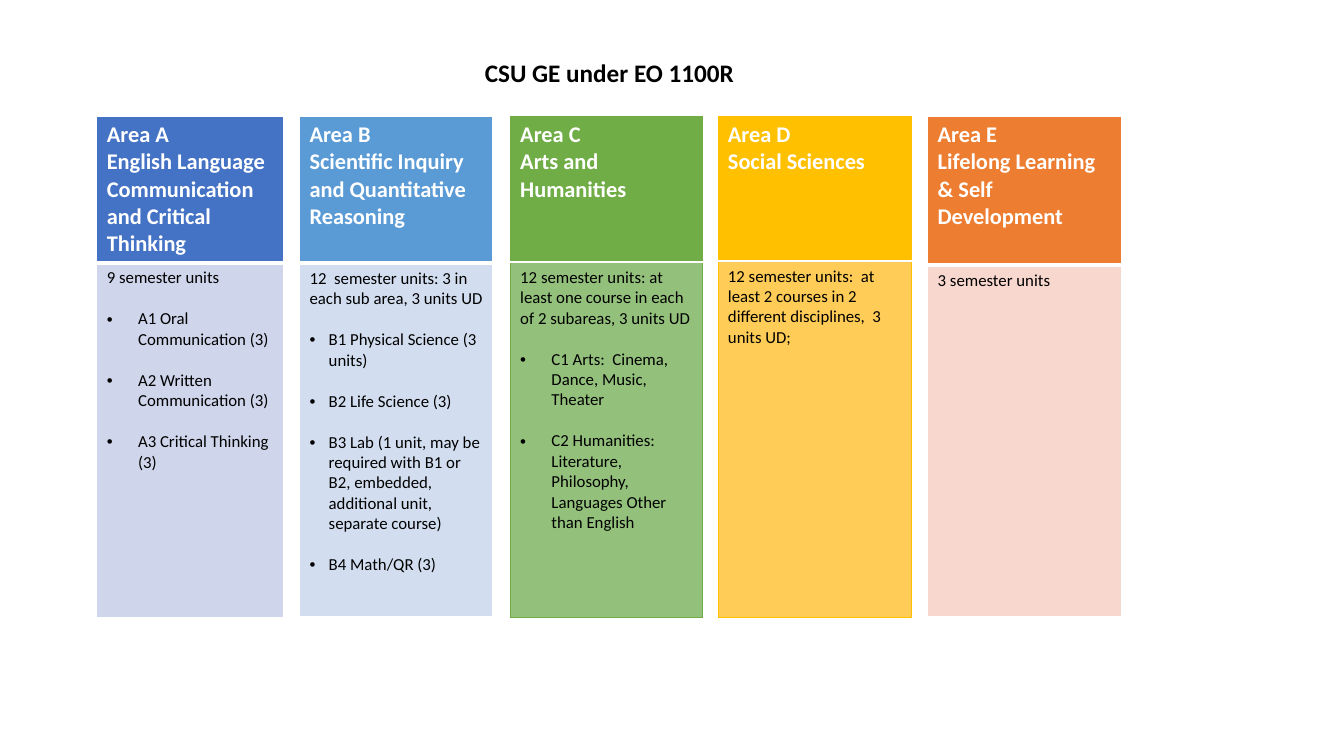
from dataclasses import dataclass

from lxml.etree import SubElement
from pptx import Presentation
from pptx.dml.color import RGBColor
from pptx.enum.text import MSO_ANCHOR, MSO_AUTO_SIZE, PP_ALIGN
from pptx.oxml import parse_xml
from pptx.oxml.ns import nsdecls, qn
from pptx.util import Inches, Pt

FONT = "Calibri"
COLORS = {
    "white": "FFFFFF", "black": "000000",
    "blue": "4472C4", "pale blue": "CFD5EA",
    "sky": "5B9BD5", "pale sky": "D2DEEF",
    "green": "70AD47", "pale green": "93C17B",
    "gold": "FFC000", "pale gold": "FFCC57",
    "orange": "ED7D31", "pale orange": "F8D7CE",
}
TOP, AREA_HEIGHT, BLANK_LINE = 1.15, 4.97, 14.65


@dataclass
class Area:
    """One column of the general education pattern."""
    letter: str
    subject: str
    units: str
    courses: tuple
    color: str
    left: float
    width: float
    header_height: float
    indent: float = 0.31
    outlined: bool = False


AREAS = [
    Area("A", "English Language Communication and Critical Thinking", "9 semester units",
         ("A1 Oral Communication (3)", "A2 Written Communication (3)",
          "A3 Critical Thinking (3)"),
         "blue", 0.96, 1.85, 1.45),
    Area("B", "Scientific Inquiry and Quantitative Reasoning",
         "12  semester units: 3 in each sub area, 3 units UD",
         ("B1 Physical Science (3 units)", "B2 Life Science (3)",
          "B3 Lab (1 unit, may be required with B1 or B2, embedded, "
          "additional unit, separate course)", "B4 Math/QR (3)"),
         "sky", 2.97, 1.92, 1.46, indent=0.19),
    Area("C", "Arts and Humanities",
         "12 semester units: at least one course in each of 2 subareas, 3 units UD",
         ("C1 Arts:  Cinema, Dance, Music, Theater",
          "C2 Humanities: Literature, Philosophy, Languages Other than English"),
         "green", 5.06, 1.91, 1.45, outlined=True),
    Area("D", "Social Sciences",
         "12 semester units:  at least 2 courses in 2 different disciplines,  3  units UD;",
         (), "gold", 7.12, 1.92, 1.44, outlined=True),
    Area("E", "Lifelong Learning & Self Development", "3 semester units",
         (), "orange", 9.2, 1.92, 1.48),
]


def write(paragraph, text, *, size, color="black", bold=False, align=PP_ALIGN.LEFT,
          before=0, bullet_indent=None):
    """Put formatted text in a paragraph, bulleted when an indent is given."""
    run = paragraph.add_run()
    run.text = text
    run.font.name, run.font.size, run.font.bold = FONT, Pt(size), bold
    run.font.color.rgb = RGBColor.from_string(COLORS[color])
    paragraph.alignment = align
    paragraph.space_before = Pt(before)
    if bullet_indent:
        properties = paragraph._p.get_or_add_pPr()
        properties.set("marL", str(Inches(bullet_indent)))
        properties.set("indent", str(-Inches(bullet_indent)))
        SubElement(properties, qn("a:buFont")).set("typeface", "Arial")
        SubElement(properties, qn("a:buChar")).set("char", "•")


def paint_cell(cell, fill, borders):
    """Fill a cell and draw its borders, given as side: (color, points)."""
    cell.fill.solid()
    cell.fill.fore_color.rgb = RGBColor.from_string(COLORS[fill])
    properties = cell._tc.get_or_add_tcPr()
    for position, side in enumerate("LRTB"):
        color, width = borders[side]
        properties.insert(position, parse_xml(
            f'<a:ln{side} {nsdecls("a")} w="{Pt(width)}"><a:solidFill>'
            f'<a:srgbClr val="{COLORS[color]}"/></a:solidFill></a:ln{side}>'))


def add_title(slide, left, top, width, height):
    """Place the heading above the five areas."""
    title = slide.shapes.title
    title.left, title.top = Inches(left), Inches(top)
    title.width, title.height = Inches(width), Inches(height)
    frame = title.text_frame
    frame.auto_size = MSO_AUTO_SIZE.NONE
    frame.vertical_anchor = MSO_ANCHOR.MIDDLE
    write(frame.paragraphs[0], "CSU GE under EO 1100R", size=18, bold=True,
          align=PP_ALIGN.CENTER)


def add_area(slide, area, left, top, width, height):
    """Build one area as a table with a header cell and a body cell."""
    table = slide.shapes.add_table(2, 1, Inches(left), Inches(top),
                                   Inches(width), Inches(height)).table
    table.first_row = table.horz_banding = False
    table.rows[0].height = Inches(area.header_height)
    table.rows[1].height = Inches(height - area.header_height)
    header, body = table.cell(0, 0), table.cell(1, 0)

    edge = (area.color, 0.5) if area.outlined else ("white", 1)
    divider = ("white", 1 if area.outlined else 3)
    edges = dict.fromkeys("LRTB", edge)
    paint_cell(header, area.color, {**edges, "B": divider})
    paint_cell(body, f"pale {area.color}", {**edges, "T": divider})

    heading = header.text_frame
    write(heading.paragraphs[0], f"Area {area.letter}", size=16, color="white", bold=True)
    write(heading.add_paragraph(), area.subject, size=16, color="white", bold=True)
    details = body.text_frame
    write(details.paragraphs[0], area.units, size=12)
    for course in area.courses:
        write(details.add_paragraph(), course, size=12, before=BLANK_LINE,
              bullet_indent=area.indent)


def main():
    """Create the slide and save it."""
    deck = Presentation()
    deck.slide_width, deck.slide_height = Inches(13.33), Inches(7.5)
    slide = deck.slides.add_slide(deck.slide_layouts[5])
    add_title(slide, 0.96, 0.52, 10.17, 0.4)
    for area in AREAS:
        add_area(slide, area, area.left, TOP, area.width, AREA_HEIGHT)
    deck.save("out.pptx")


if __name__ == "__main__":
    main()
